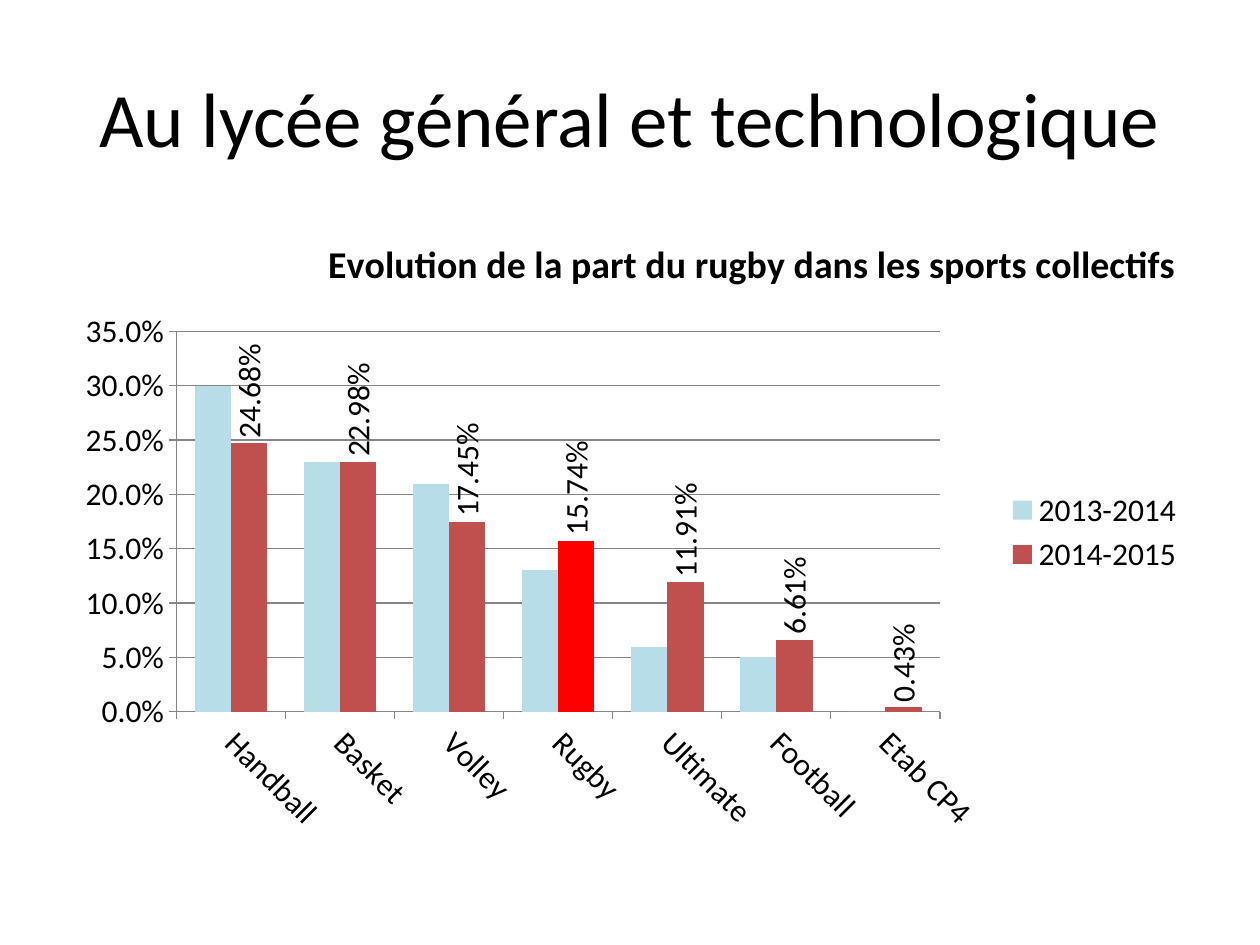
import pptx
import pptx.util
import pptx.dml.color
import pptx.chart.data
import pptx.enum.chart
import pptx.enum.text
import pptx.oxml
from dataclasses import dataclass

Inches = pptx.util.Inches
Pt = pptx.util.Pt
enums = pptx.enum.chart


@dataclass(frozen=True)
class Theme:
    font: str = "Calibri"
    head: float = 44
    title: float = 21.6
    body: float = 18
    ink: str = "000000"
    grid: str = "868686"
    past: str = "B7DEE8"
    now: str = "C0504D"
    mark: str = "FF0000"


THEME = Theme()
SPORTS = ["Handball", "Basket", "Volley", "Rugby", "Ultimate", "Football", "Etab CP4"]
PAST = [0.3, 0.23, 0.21, 0.13, 0.06, 0.05, 0]
NOW = [0.2468, 0.2298, 0.1745, 0.1574, 0.1191, 0.0661, 0.0043]


def rgb(code):
    return pptx.dml.color.RGBColor.from_string(code)


def style(font, size, bold=False):
    font.name = THEME.font
    font.size = Pt(size)
    font.bold = bold
    font.color.rgb = rgb(THEME.ink)


def paint(part, color):
    part.format.fill.solid()
    part.format.fill.fore_color.rgb = rgb(color)


def rule(line):
    line.color.rgb = rgb(THEME.grid)
    line.width = Pt(0.75)


def turn(chart, owner, angle):
    body = chart.element.xpath(f".//{owner}/c:txPr/a:bodyPr")[0]
    body.set("rot", str(angle * 60000))
    body.set("vert", "horz")


def place(node, index, box, inner=False, **sides):
    for old in node.xpath("./c:layout"):
        node.remove(old)
    target = '<c:layoutTarget val="inner"/>' if inner else ""
    modes = "".join(f'<c:{side}Mode val="edge"/>' for side in "xy")
    whole = dict(x=box[0], w=box[0], y=box[1], h=box[1])
    spots = "".join(f'<c:{side} val="{Inches(value) / whole[side]}"/>'
                    for side, value in sides.items())
    space = "http://schemas.openxmlformats.org/drawingml/2006/chart"
    node.insert(index, pptx.oxml.parse_xml(
        f'<c:layout xmlns:c="{space}"><c:manualLayout>{target}{modes}{spots}'
        "</c:manualLayout></c:layout>"))


def add_head(slide, left, top, width, height):
    frame = slide.shapes.add_textbox(left, top, width, height).text_frame
    frame.word_wrap = True
    frame.vertical_anchor = pptx.enum.text.MSO_ANCHOR.MIDDLE
    frame.text = "Au lycée général et technologique"
    line = frame.paragraphs[0]
    line.alignment = pptx.enum.text.PP_ALIGN.CENTER
    style(line.runs[0].font, THEME.head)


def set_axes(chart):
    for axis in (chart.category_axis, chart.value_axis):
        style(axis.tick_labels.font, THEME.body)
        axis.major_tick_mark = enums.XL_TICK_MARK.OUTSIDE
        rule(axis.format.line)
    turn(chart, "c:catAx", 45)
    scale = chart.value_axis
    scale.minimum_scale, scale.maximum_scale, scale.major_unit = 0, 0.35, 0.05
    scale.tick_labels.number_format = "0.0%"
    scale.tick_labels.number_format_is_linked = False
    scale.has_major_gridlines = True
    rule(scale.major_gridlines.format.line)


def set_bars(chart):
    plot = chart.plots[0]
    plot.gap_width = 100
    plot.overlap = 0
    plot.vary_by_categories = False
    past, now = plot.series
    paint(past, THEME.past)
    paint(now, THEME.now)
    paint(now.points[SPORTS.index("Rugby")], THEME.mark)
    labels = now.data_labels
    labels.show_value = True
    labels.number_format = "0.00%"
    labels.number_format_is_linked = False
    labels.position = enums.XL_LABEL_POSITION.OUTSIDE_END
    style(labels.font, THEME.body)
    turn(chart, "c:dLbls", -90)


def add_bars(slide, left, top, width, height):
    data = pptx.chart.data.CategoryChartData()
    data.categories = SPORTS
    data.add_series("2013-2014", PAST)
    data.add_series("2014-2015", NOW)
    chart = slide.shapes.add_chart(
        enums.XL_CHART_TYPE.COLUMN_CLUSTERED, left, top, width, height, data).chart
    style(chart.font, THEME.body)
    chart.has_title = True
    title = chart.chart_title
    title.include_in_layout = False
    title.text_frame.text = "Evolution de la part du rugby dans les sports collectifs"
    style(title.text_frame.paragraphs[0].runs[0].font, THEME.title, True)
    box = (width, height)
    place(title.element, 1, box, x=2.05, y=0.08)
    place(chart.element.xpath(".//c:plotArea")[0], 0, box, True,
          x=0.9, y=0.88, w=6.06, h=3.02)
    chart.has_legend = True
    chart.legend.position = enums.XL_LEGEND_POSITION.RIGHT
    chart.legend.include_in_layout = False
    style(chart.legend.font, THEME.body)
    set_axes(chart)
    set_bars(chart)


def main():
    deck = pptx.Presentation()
    deck.slide_width, deck.slide_height = Inches(10), Inches(7.5)
    slide = deck.slides.add_slide(deck.slide_layouts[6])
    add_head(slide, Inches(0.5), Inches(0.3), Inches(9), Inches(1.25))
    add_bars(slide, Inches(0.5), Inches(1.75), Inches(9), Inches(4.95))
    deck.save("out.pptx")


if __name__ == "__main__":
    main()
